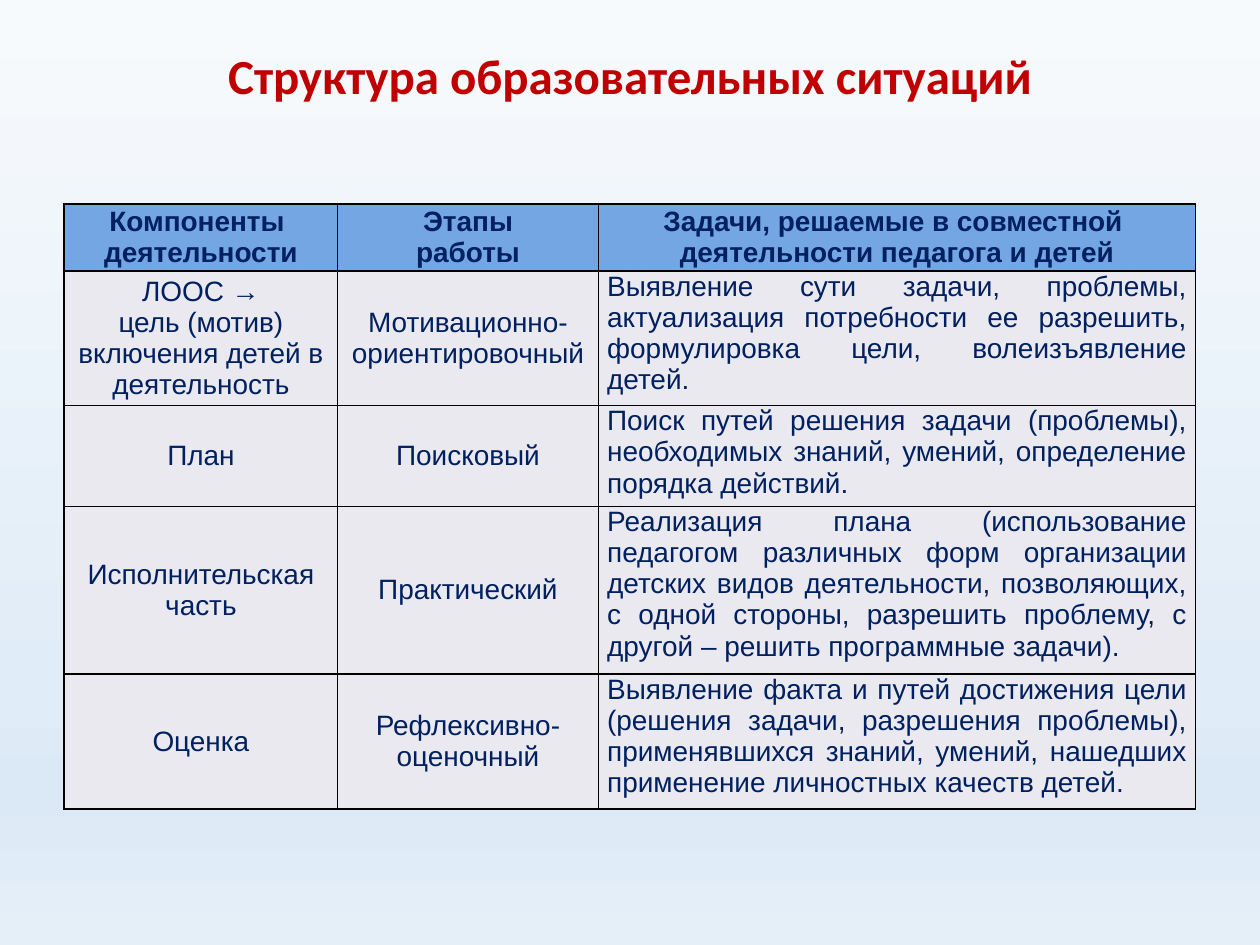
from dataclasses import dataclass

from lxml import etree
from pptx import Presentation
from pptx import util as u
from pptx.dml.color import RGBColor
from pptx.enum import text
from pptx.oxml.ns import qn


@dataclass(frozen=True)
class Theme:
    title_font: str = "Calibri"
    table_font: str = "Arial"
    title_size: int = 28
    table_size: int = 16
    title_color: str = "C00000"
    table_color: str = "002060"
    header_fill: str = "73A6E3"
    body_fill: str = "E9E9EF"
    border: str = "000000"
    gradient: tuple = (
        (0, "F7FAFD", 100), (74, "E0ECF7", 70),
        (83, "DBE9F6", 83), (100, "E5EFF8", 83),
    )


THEME = Theme()
WIDTH, HEIGHT = u.Inches(10), u.Inches(7.5)
TITLE_BOX = (0.05, 0.048, 0.9, 0.095)
TABLE_BOX = (0.051, 0.216, 0.898, 0.64)
COLUMNS = (2.17, 2.07, 4.74)
ROWS = (0.53, 1.07, 0.8, 1.33, 1.07)
TITLE = "Структура образовательных ситуаций"
CONTENT = (
    (("Компоненты ", "деятельности"),
     ("Этапы", "работы"),
     ("Задачи, решаемые в совместной ", "деятельности педагога и детей")),
    (("ЛООС →", "цель (мотив)", "включения детей в деятельность"),
     ("Мотивационно-ориентировочный",),
     ("Выявление сути задачи, проблемы, актуализация потребности ее разрешить, "
      "формулировка цели, волеизъявление детей.",)),
    (("План",),
     ("Поисковый",),
     ("Поиск путей решения задачи (проблемы), необходимых знаний, умений, "
      "определение порядка действий.",)),
    (("Исполнительская", "часть"),
     ("Практический",),
     ("Реализация плана (использование педагогом различных форм организации "
      "детских видов деятельности, позволяющих, с одной стороны, разрешить "
      "проблему, с другой – решить программные задачи).",)),
    (("Оценка",),
     ("Рефлексивно-оценочный",),
     ("Выявление факта и путей достижения цели (решения задачи, разрешения "
      "проблемы), применявшихся знаний, умений, нашедших применение личностных "
      "качеств детей. ",)),
)


def place(box):
    return [round(share * side) for share, side in zip(box, (WIDTH, HEIGHT) * 2)]


def add_run(paragraph, words, font, size, color, bold):
    run = paragraph.add_run()
    run.text = words
    run.font.name = font
    run.font.size = u.Pt(size)
    run.font.bold = bold
    run.font.color.rgb = RGBColor.from_string(color)


def paint_background(slide):
    slide.background.fill.gradient()
    gradient = next(slide.element.iter(qn("a:gradFill")))
    stops = gradient.find(qn("a:gsLst"))
    for stop in list(stops):
        stops.remove(stop)
    for position, color, opacity in THEME.gradient:
        stop = etree.SubElement(stops, qn("a:gs"), pos=str(position * 1000))
        shade = etree.SubElement(stop, qn("a:srgbClr"), val=color)
        if opacity < 100:
            etree.SubElement(shade, qn("a:alpha"), val=str(opacity * 1000))
    gradient.find(qn("a:lin")).set("ang", str(90 * 60000))


def add_title(slide, box):
    title = slide.shapes.title
    title.left, title.top, title.width, title.height = place(box)
    frame = title.text_frame
    frame.word_wrap = True
    frame.auto_size = text.MSO_AUTO_SIZE.NONE
    frame.vertical_anchor = text.MSO_ANCHOR.TOP
    paragraph = frame.paragraphs[0]
    paragraph.alignment = text.PP_ALIGN.CENTER
    paragraph.line_spacing = 0.9
    paragraph.space_before = u.Pt(7.5)
    add_run(paragraph, TITLE, THEME.title_font, THEME.title_size, THEME.title_color, True)


def add_borders(cell):
    properties = cell._tc.get_or_add_tcPr()
    for index, side in enumerate(("lnL", "lnR", "lnT", "lnB")):
        line = etree.Element(qn(f"a:{side}"), w=str(u.Pt(1)))
        fill = etree.SubElement(line, qn("a:solidFill"))
        etree.SubElement(fill, qn("a:srgbClr"), val=THEME.border)
        properties.insert(index, line)


def fill_cell(cell, lines, is_header, is_task):
    justified = is_task and not is_header
    cell.margin_left = cell.margin_right = u.Inches(0.07)
    cell.margin_top = cell.margin_bottom = 0
    cell.vertical_anchor = text.MSO_ANCHOR.TOP if justified else text.MSO_ANCHOR.MIDDLE
    cell.fill.solid()
    cell.fill.fore_color.rgb = RGBColor.from_string(
        THEME.header_fill if is_header else THEME.body_fill)
    add_borders(cell)
    frame = cell.text_frame
    for index, words in enumerate(lines):
        paragraph = frame.add_paragraph() if index else frame.paragraphs[0]
        paragraph.alignment = text.PP_ALIGN.JUSTIFY if justified else text.PP_ALIGN.CENTER
        add_run(paragraph, words, THEME.table_font, THEME.table_size,
                THEME.table_color, is_header)


def add_stages_table(slide, box):
    left, top, width, height = place(box)
    table = slide.shapes.add_table(
        len(ROWS), len(COLUMNS), left, top, width, height).table
    for column, share in zip(table.columns, COLUMNS):
        column.width = round(width * share / sum(COLUMNS))
    for row, share in zip(table.rows, ROWS):
        row.height = round(height * share / sum(ROWS))
    for row_index, row in enumerate(CONTENT):
        for column_index, lines in enumerate(row):
            fill_cell(table.cell(row_index, column_index), lines,
                      row_index == 0, column_index == len(COLUMNS) - 1)


def main():
    presentation = Presentation()
    presentation.slide_width, presentation.slide_height = WIDTH, HEIGHT
    slide = presentation.slides.add_slide(presentation.slide_layouts[5])
    paint_background(slide)
    add_title(slide, TITLE_BOX)
    add_stages_table(slide, TABLE_BOX)
    presentation.save("out.pptx")


if __name__ == "__main__":
    main()
